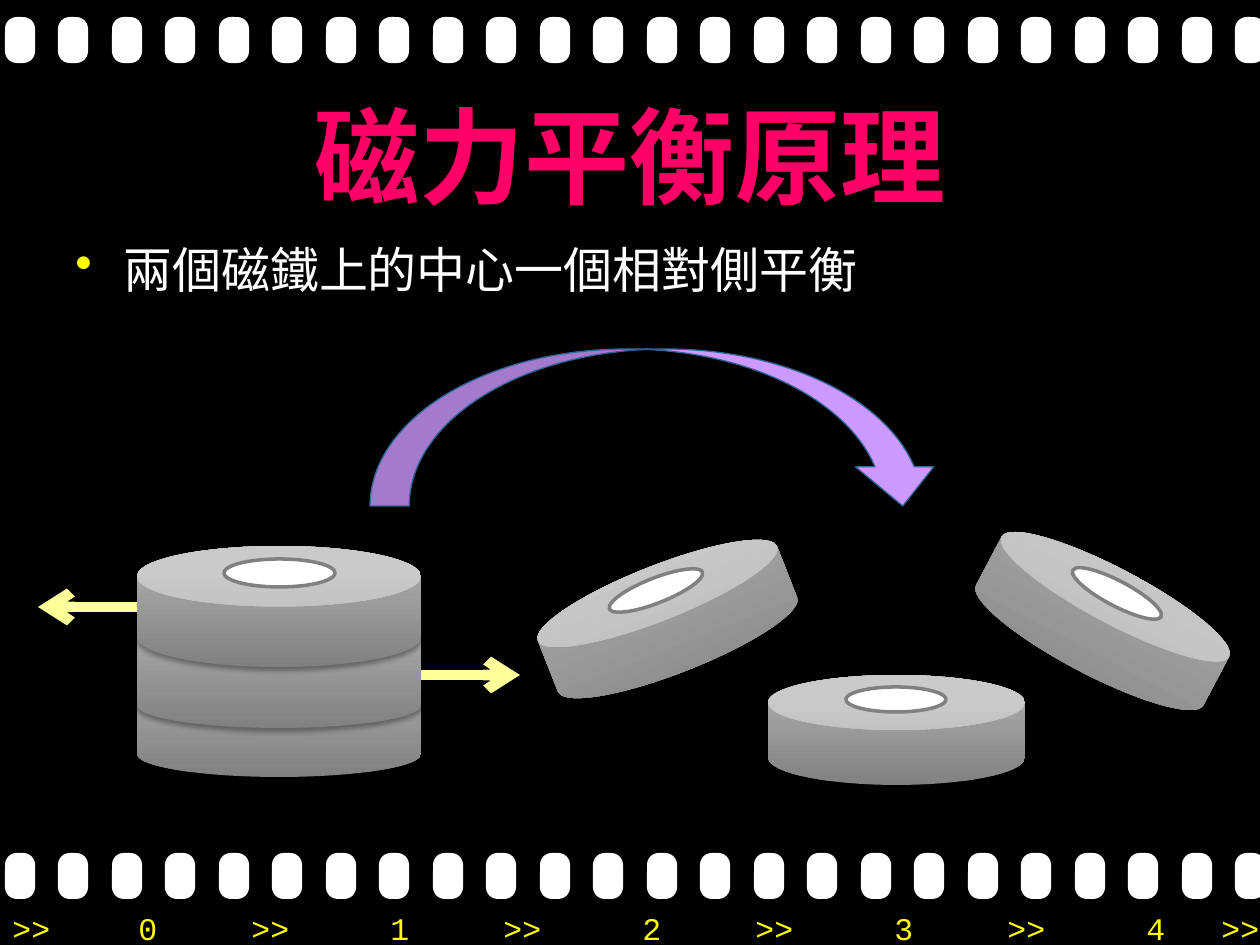
import math

import lxml.etree
import pptx
import pptx.dml.color
import pptx.enum.shapes
import pptx.enum.text
import pptx.oxml.ns
import pptx.util

SHAPE = pptx.enum.shapes.MSO_SHAPE
ANCHOR = pptx.enum.text.MSO_ANCHOR
ALIGN = pptx.enum.text.PP_ALIGN
EMU_PER_PX = 914400 / 126


def px(length):
    return pptx.util.Emu(round(length * EMU_PER_PX))


def rgb(color):
    return pptx.dml.color.RGBColor.from_string(color)


def add_child(parent, tag, **attributes):
    child = lxml.etree.SubElement(parent, pptx.oxml.ns.qn(tag))
    for key, value in attributes.items():
        child.set(key, str(value))
    return child


class FilmSlide:
    cjk = "Noto Sans CJK SC"
    mono = "Courier New"
    white = "FFFFFF"
    yellow = "FFFF00"
    pink = "FF0066"
    rim = "808080"
    dark_steel = "818181"
    light_steel = "A8A8A8"
    arrow_yellow = "FFFF99"
    violet = "CC99FF"
    violet_edge = "2F6498"

    def __init__(self, deck):
        self.slide = deck.slides.add_slide(deck.slide_layouts[6])
        background = self.slide.background.fill
        background.solid()
        background.fore_color.rgb = rgb("000000")

    def shape(self, kind, x, y, w, h, fill=None, line=None, width=0, rotation=0):
        shape = self.slide.shapes.add_shape(kind, px(x), px(y), px(w), px(h))
        shape.shadow.inherit = False
        shape.rotation = rotation
        if fill:
            shape.fill.solid()
            shape.fill.fore_color.rgb = rgb(fill)
        if line:
            shape.line.color.rgb = rgb(line)
            shape.line.width = pptx.util.Pt(width)
        else:
            shape.line.fill.background()
        return shape

    def cast_shadow(self, shape, opacity, distance):
        effects = shape._element.spPr.find(pptx.oxml.ns.qn("a:effectLst"))
        shadow = add_child(effects, "a:outerShdw", blurRad=pptx.util.Pt(3.1),
                           dist=pptx.util.Pt(distance), dir=5400000, rotWithShape=0)
        color = add_child(shadow, "a:srgbClr", val="000000")
        add_child(color, "a:alpha", val=opacity * 1000)

    def film_strip(self, y, count=24):
        for index in range(count):
            hole = self.shape(SHAPE.ROUNDED_RECTANGLE,
                              5 + round(1230 * index / (count - 1)), y, 30, 46, self.white)
            hole.adjustments[0] = 0.39

    def disc(self, x, y, w, h, rotation=0, curve=0.5):
        disc = self.shape(SHAPE.CAN, x, y, w, h, rotation=rotation)
        disc.adjustments[0] = curve
        disc.fill.gradient()
        disc.fill.gradient_angle = 90
        stops = zip(disc.fill.gradient_stops, (0, 0.8), (self.dark_steel, self.light_steel))
        for stop, position, color in stops:
            stop.position = position
            stop.color.rgb = rgb(color)
        self.cast_shadow(disc, 35, 1.8)

    def magnet(self, x, y, w, h, rotation=0):
        self.disc(x, y, w, h, rotation)
        hole_w, hole_h, rise = round(0.39 * w), round(0.23 * h), 0.28 * h
        angle = math.radians(rotation)
        center_x = x + w / 2 + rise * math.sin(angle)
        center_y = y + h / 2 - rise * math.cos(angle)
        self.shape(SHAPE.OVAL, round(center_x - hole_w / 2), round(center_y - hole_h / 2),
                   hole_w, hole_h, self.white, self.rim, 2, rotation)

    def flip_arrow(self, x, y, w, h):
        arrow = self.shape(SHAPE.CURVED_DOWN_ARROW, x, y, w, h,
                           self.violet, self.violet_edge, 0.75)
        self.cast_shadow(arrow, 38, 1.6)

    def slide_arrow(self, start_x, end_x, y):
        arrow = self.slide.shapes.add_connector(
            pptx.enum.shapes.MSO_CONNECTOR.STRAIGHT, px(start_x), px(y), px(end_x), px(y))
        arrow.line.color.rgb = rgb(self.arrow_yellow)
        arrow.line.width = pptx.util.Pt(6)
        add_child(arrow.line._get_or_add_ln(), "a:tailEnd", type="arrow")
        add_child(arrow._element.spPr, "a:effectLst")

    def text(self, x, y, w, h, words, size, font, color, bold=False,
             align=ALIGN.LEFT, anchor=ANCHOR.TOP, bullet=None, tabs=()):
        frame = self.slide.shapes.add_textbox(px(x), px(y), px(w), px(h)).text_frame
        frame.word_wrap = True
        frame.vertical_anchor = anchor
        paragraph = frame.paragraphs[0]
        paragraph.alignment = align
        properties = paragraph._p.get_or_add_pPr()
        if bullet:
            properties.set("marL", str(px(48)))
            properties.set("indent", str(px(-48)))
            add_child(add_child(properties, "a:buClr"), "a:srgbClr", val=self.yellow)
            add_child(properties, "a:buChar", char=bullet)
        if tabs:
            stops = add_child(properties, "a:tabLst")
            for position in tabs:
                add_child(stops, "a:tab", pos=px(position), algn="l")
        run = paragraph.add_run()
        run.text = words
        run.font.size = pptx.util.Pt(size)
        run.font.bold = bold
        run.font.color.rgb = rgb(color)
        run.font.name = font
        add_child(run._r.get_or_add_rPr(), "a:ea", typeface=font)


def main():
    deck = pptx.Presentation()
    deck.slide_width, deck.slide_height = px(1260), px(945)
    film = FilmSlide(deck)

    for strip_y in (853, 17):
        film.film_strip(strip_y)
    frame_tabs = [start + 252 * frame for frame in range(5) for start in (126, 239)]
    frame_tabs[-1] = 1209
    frame_marks = ">>" + "".join(f"\t{frame}\t>>" for frame in range(5))
    film.text(0, 903, 1285, 50, frame_marks, 18, film.mono, film.yellow, tabs=frame_tabs)

    film.text(63, 76, 1134, 157, "磁力平衡原理", 60, film.cjk, film.pink, bold=True,
              align=ALIGN.CENTER, anchor=ANCHOR.MIDDLE)
    film.text(63, 233, 1134, 600, "兩個磁鐵上的中心一個相對側平衡", 28, film.cjk,
              film.white, bullet="•")

    for x, y, rotation in ((768, 675, 0), (974, 566, 27.8), (539, 564, 338.5)):
        film.magnet(x, y, 257, 110, rotation)
    film.flip_arrow(370, 349, 572, 157)

    for y in (656, 607):
        film.disc(137, y, 284, 121, curve=0.38)
    film.magnet(137, 546, 284, 121)
    film.slide_arrow(137, 38, 607)
    film.slide_arrow(421, 520, 675)

    deck.save("out.pptx")


if __name__ == "__main__":
    main()
